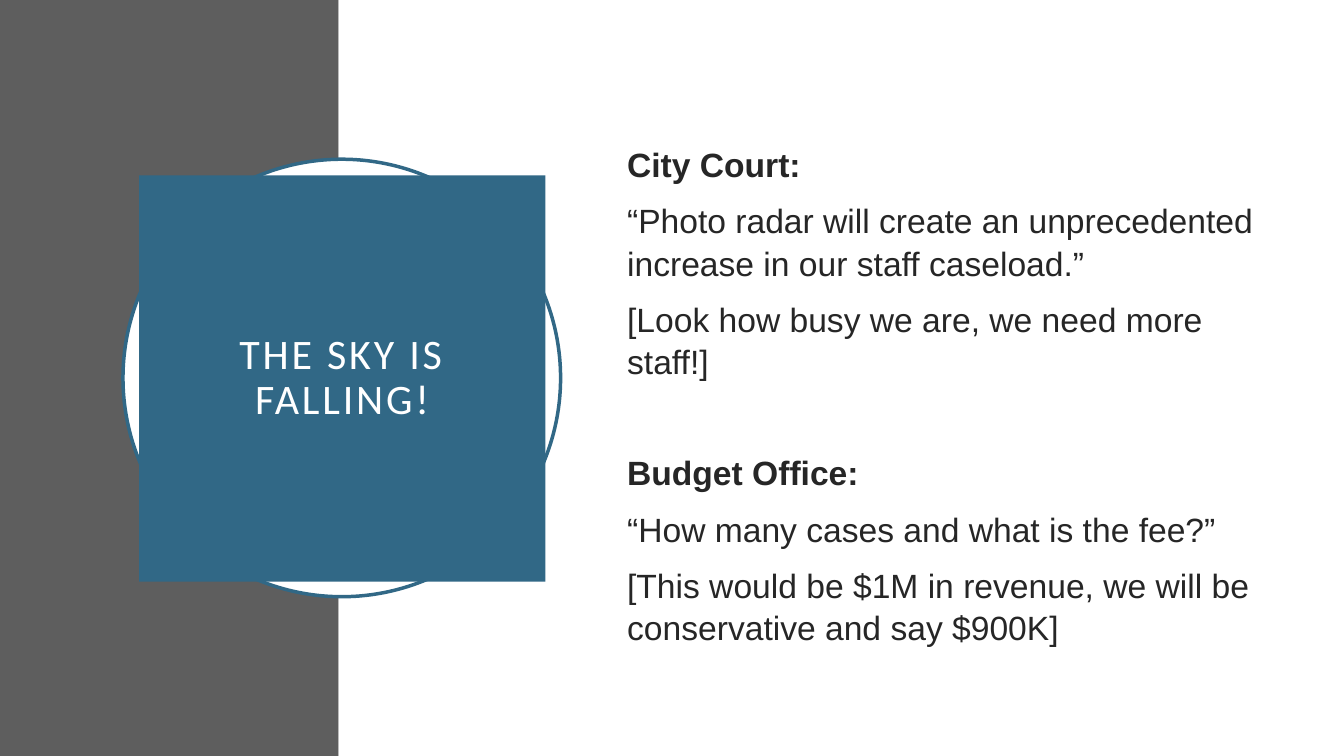
from dataclasses import dataclass

from pptx import Presentation
from pptx.dml.color import RGBColor
from pptx.enum.shapes import MSO_SHAPE
from pptx.enum.text import MSO_ANCHOR, MSO_AUTO_SIZE, PP_ALIGN
from pptx.oxml import parse_xml
from pptx.oxml.ns import nsdecls
from pptx.util import Inches, Pt

RECTANGLE, OVAL = MSO_SHAPE.RECTANGLE, MSO_SHAPE.OVAL
MIDDLE, NO_FIT = MSO_ANCHOR.MIDDLE, MSO_AUTO_SIZE.NONE
LEFT, CENTER = PP_ALIGN.LEFT, PP_ALIGN.CENTER


@dataclass(frozen=True)
class Theme:
    gray: str = "5E5E5E"
    white: str = "FFFFFF"
    blue: str = "316886"
    ink: str = "262626"
    title_font: str = "Calibri"
    body_font: str = "Arial"
    title_size: float = 30
    body_size: float = 24
    paragraph_gap: float = 10
    group_gap: float = 49


# Each group: heading, then its statements
GROUPS = [
    ("City Court:", [
        "“Photo radar will create an unprecedented increase in our staff caseload.”",
        "[Look how busy we are, we need more staff!]",
    ]),
    ("Budget Office:", [
        "“How many cases and what is the fee?”",
        "[This would be $1M in revenue, we will be conservative and say $900K]",
    ]),
]


class PageBuilder:
    def __init__(self, page, theme):
        self.page = page
        self.theme = theme

    def panel(self, kind, left, top, width, height, fill, line=None):
        shape = self.page.shapes.add_shape(
            kind, Inches(left), Inches(top), Inches(width), Inches(height))
        shape.shadow.inherit = False
        shape.fill.solid()
        shape.fill.fore_color.rgb = RGBColor.from_string(fill)
        if line:
            shape.line.color.rgb = RGBColor.from_string(line)
            shape.line.width = Pt(2.5)
        else:
            shape.line.fill.background()

    def place(self, box, left, top, width, height):
        """Position a placeholder in front of the panels."""
        box.left, box.top = Inches(left), Inches(top)
        box.width, box.height = Inches(width), Inches(height)
        box.element.getparent().append(box.element)
        frame = box.text_frame
        frame.word_wrap = True
        frame.auto_size = NO_FIT
        frame.vertical_anchor = MIDDLE
        return frame

    def span(self, para, text, font, size, color, bold=False):
        span = para.add_run()
        span.text = text
        span.font.name = font
        span.font.size = Pt(size)
        span.font.bold = bold
        span.font.color.rgb = RGBColor.from_string(color)
        return span

    def title(self, text, left, top, side):
        theme = self.theme
        box = self.page.shapes.title
        frame = self.place(box, left, top, side, side)
        box.fill.solid()
        box.fill.fore_color.rgb = RGBColor.from_string(theme.blue)
        frame.margin_left = frame.margin_right = Inches(0.2)
        frame.margin_top = frame.margin_bottom = Inches(0.2)
        para = frame.paragraphs[0]
        para.alignment = CENTER
        para.line_spacing = 0.9
        span = self.span(para, text, theme.title_font, theme.title_size, theme.white)
        span.font._element.set("spc", "200")

    def body(self, groups, left, top, width, height):
        theme = self.theme
        frame = self.place(self.page.placeholders[1], left, top, width, height)
        rows = []
        for index, (heading, statements) in enumerate(groups):
            rows.append((heading, True, theme.group_gap if index else theme.paragraph_gap))
            rows += [(text, False, theme.paragraph_gap) for text in statements]
        for index, (text, bold, gap) in enumerate(rows):
            para = frame.add_paragraph() if index else frame.paragraphs[0]
            para.alignment = LEFT
            para.line_spacing = 1.05
            para.space_before = Pt(gap)
            para.space_after = Pt(0)
            # No bullet and no hanging indent
            properties = para._p.get_or_add_pPr()
            properties.set("marL", "0")
            properties.set("indent", "0")
            properties.append(parse_xml(f"<a:buNone {nsdecls('a')}/>"))
            self.span(para, text, theme.body_font, theme.body_size, theme.ink, bold)


def main():
    theme = Theme()
    deck = Presentation()
    deck.slide_width, deck.slide_height = Inches(13.33), Inches(7.5)
    page = deck.slides.add_slide(deck.slide_layouts[1])
    builder = PageBuilder(page, theme)

    # Background halves and ring
    builder.panel(RECTANGLE, 0, 0, 3.36, 7.5, theme.gray)
    builder.panel(RECTANGLE, 3.36, 0, 9.97, 7.5, theme.white)
    builder.panel(OVAL, 1.22, 1.58, 4.34, 4.34, theme.white, theme.blue)

    # Title block and statements
    builder.title("THE SKY IS FALLING!", 1.38, 1.74, 4.03)
    builder.body(GROUPS, 6.12, 0.87, 6.46, 6.09)

    deck.save("out.pptx")


if __name__ == "__main__":
    main()
